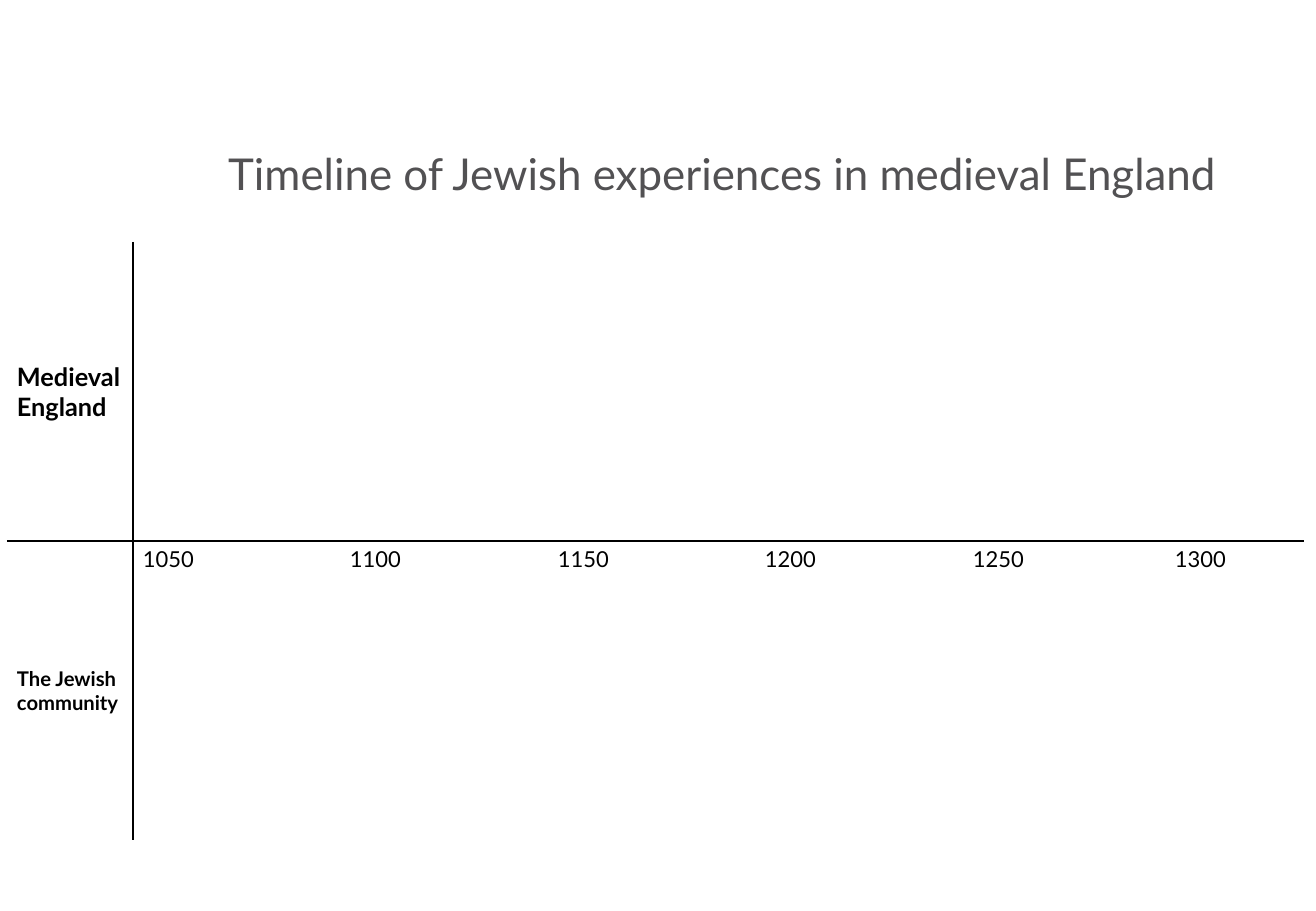
from pptx import Presentation
from pptx.dml.color import RGBColor
from pptx.enum.text import MSO_ANCHOR as Anchor, PP_ALIGN as Align
from pptx.oxml import parse_xml
from pptx.oxml.ns import nsdecls
from pptx.util import Pt

SCALE = 914400 / 121.5
FONT = "Lato"
BLACK, GREY = "000000", "525153"
YEARS = ["1050", "1100", "1150", "1200", "1250", "1300"]
# Even steps of 207.5 px, with the last year set slightly closer
STOPS = [step * 415 // 2 for step in range(1, 5)] + [1032]


def px(n):
    return round(n * SCALE)


def color(code):
    return RGBColor.from_string(code)


def write(frame, text, size, bold=False, ink=BLACK, align=Align.LEFT,
          space=None, stops=()):
    par = frame.paragraphs[0]
    par.alignment = align
    if space:
        par.line_spacing = space
    if stops:
        tabs = "".join(f'<a:tab pos="{px(x)}" algn="l"/>' for x in stops)
        par._p.get_or_add_pPr().append(
            parse_xml(f'<a:tabLst {nsdecls("a")}>{tabs}</a:tabLst>'))
    run = par.add_run()
    run.text = text
    font = run.font
    font.name, font.size, font.bold = FONT, Pt(size), bold
    font.color.rgb = color(ink)


def border(cell, sides):
    props = cell._tc.get_or_add_tcPr()
    for side in "LRTB":
        if side in sides:
            width = Pt(1)
            fill = f'<a:solidFill><a:srgbClr val="{BLACK}"/></a:solidFill>'
        else:
            width, fill = 0, "<a:noFill/>"
        props.append(parse_xml(
            f'<a:ln{side} {nsdecls("a")} w="{width}">{fill}</a:ln{side}>'))


def title(slide, x, y, w, h):
    frame = slide.shapes.add_textbox(px(x), px(y), px(w), px(h)).text_frame
    frame.word_wrap = True
    frame.vertical_anchor = Anchor.MIDDLE
    write(frame, "Timeline of Jewish experiences in medieval England", 26,
          ink=GREY, align=Align.CENTER, space=0.9)


def timeline(slide, x, y, w, h):
    table = slide.shapes.add_table(2, 2, px(x), px(y), px(w), px(h)).table
    table.first_row = table.horz_banding = False
    label = 126
    for col, width in zip(table.columns, (label, w - label)):
        col.width = px(width)
    for row in table.rows:
        row.height = px(h / 2)

    # Inner rules only
    for r, edge in enumerate("BT"):
        for c, side in enumerate("RL"):
            cell = table.cell(r, c)
            cell.margin_left, cell.margin_right = px(10), px(9)
            cell.margin_top = cell.margin_bottom = px(5)
            border(cell, side + edge)
            cell.fill.background()

    # Row labels
    labels = [("Medieval England", 15), ("The Jewish community", 12)]
    for r, (text, size) in enumerate(labels):
        cell = table.cell(r, 0)
        cell.vertical_anchor = Anchor.MIDDLE
        write(cell.text_frame, text, size, bold=True)

    # Year scale
    write(table.cell(1, 1).text_frame, "\t".join(YEARS), 13, stops=STOPS)


def main():
    deck = Presentation()
    deck.slide_width, deck.slide_height = px(1316), px(911)
    slide = deck.slides.add_slide(deck.slide_layouts[6])
    title(slide, 192, 140, 1061, 72)
    timeline(slide, 7, 242, 1297, 598)
    deck.save("out.pptx")


if __name__ == "__main__":
    main()
